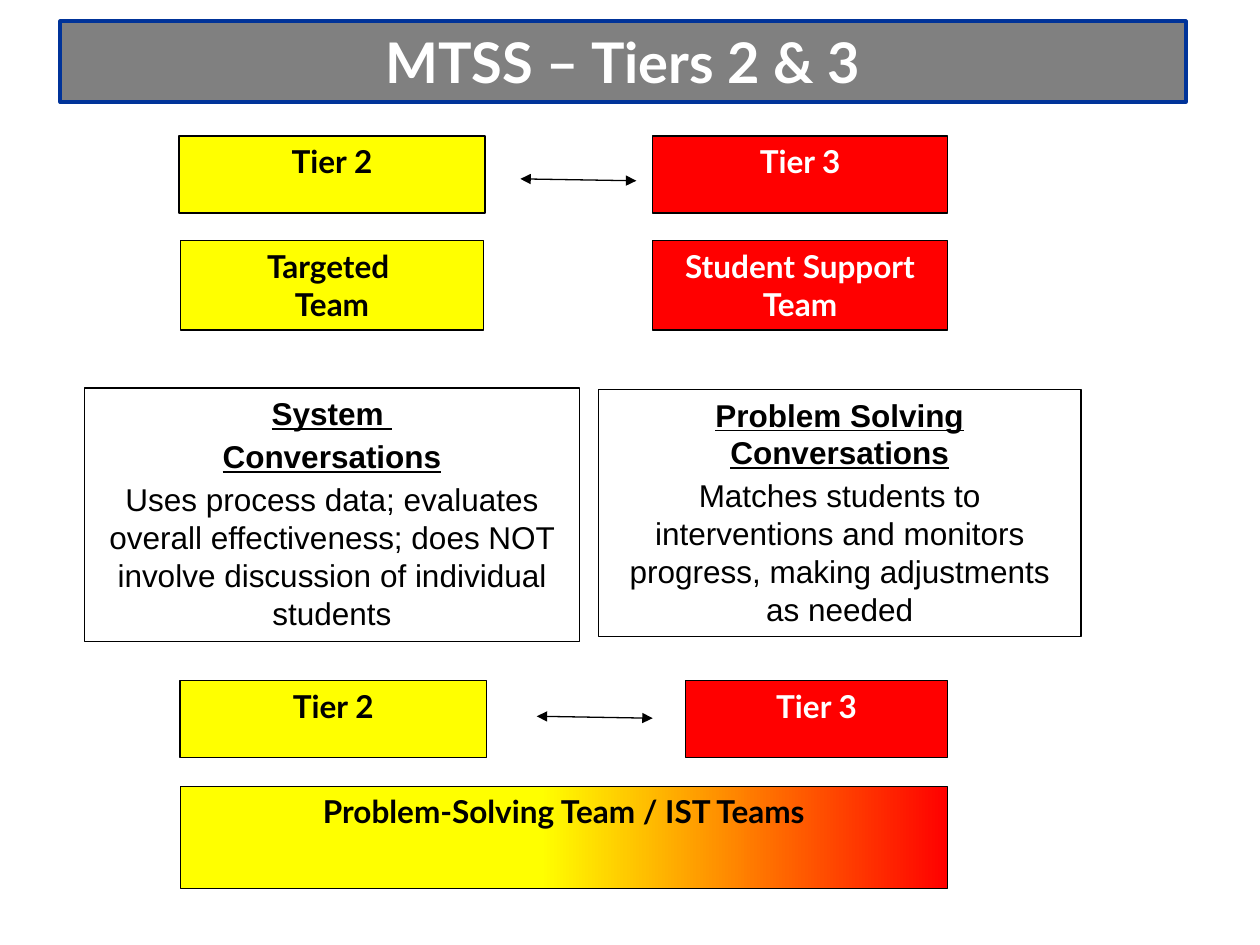
from lxml.etree import SubElement
from pptx import Presentation
from pptx.dml.color import RGBColor
from pptx.enum.shapes import MSO_CONNECTOR, MSO_SHAPE
from pptx.enum.text import MSO_ANCHOR, PP_ALIGN
from pptx.oxml.ns import qn
from pptx.util import Inches, Pt

YELLOW, RED, BLACK, WHITE = "FFFF00", "FF0000", "000000", "FFFFFF"
GRAY, NAVY = "808080", "003399"
COLS, ROWS = 100, 75


def color(code):
    return RGBColor.from_string(code)


class Board:
    """Style and current slide; lengths are columns and rows of the grid."""

    def __init__(self, deck):
        self.slide = deck.slides.add_slide(deck.slide_layouts[6])
        self.col = deck.slide_width / COLS
        self.row = deck.slide_height / ROWS

    def place(self, x, y):
        return round(x * self.col), round(y * self.row)

    def box(self, area, fill, line=BLACK, width=0.75):
        x, y, w, h = area
        box = self.slide.shapes.add_shape(
            MSO_SHAPE.RECTANGLE, *self.place(x, y), *self.place(w, h))
        box.shadow.inherit = False
        if isinstance(fill, str):
            box.fill.solid()
            box.fill.fore_color.rgb = color(fill)
        else:
            box.fill.gradient()
            box.fill.gradient_angle = 0
            for stop, (pos, code) in zip(box.fill.gradient_stops, fill):
                stop.position = pos
                stop.color.rgb = color(code)
        box.line.color.rgb = color(line)
        box.line.width = Pt(width)
        box.text_frame.word_wrap = True
        box.text_frame.vertical_anchor = MSO_ANCHOR.TOP
        return box

    def letter(self, box, lines, ink, font="Lato", size=18, gap=0):
        """Fill a box with centred bold lines, gap points apart."""
        frame = box.text_frame
        frame.text = "\n".join(lines)
        for i, para in enumerate(frame.paragraphs):
            para.alignment = PP_ALIGN.CENTER
            para.space_before = Pt(gap if i else 0)
            para.font.name = font
            para.font.size = Pt(size)
            para.font.bold = True
            para.font.color.rgb = color(ink)

    def label(self, area, fill, ink, *lines):
        self.letter(self.box(area, fill), lines, ink)

    def panel(self, area, heads, body):
        """White box with underlined headings over plain text."""
        box = self.box(area, WHITE)
        self.letter(box, [*heads, body], BLACK, "Arial", gap=3)
        *tops, last = box.text_frame.paragraphs
        for para in tops:
            para.font.underline = True
        last.font.bold = False

    def arrow(self, start, end):
        link = self.slide.shapes.add_connector(
            MSO_CONNECTOR.STRAIGHT, *self.place(*start), *self.place(*end))
        link.line.color.rgb = color(BLACK)
        link.line.width = Pt(0.75)
        line = link._element.spPr.find(qn("a:ln"))
        for tip in ("a:headEnd", "a:tailEnd"):
            SubElement(line, qn(tip), type="triangle")
        SubElement(link._element.spPr, qn("a:effectLst"))


def main():
    deck = Presentation()
    deck.slide_width, deck.slide_height = Inches(10), Inches(7.5)
    board = Board(deck)

    # Title bar
    title = board.box((4.8, 1.7, 89.3, 6.4), GRAY, NAVY, 2.25)
    board.letter(title, ["MTSS – Tiers 2 & 3"], WHITE, size=32)

    # Tier pairs: row, left of Tier 2, left and width of Tier 3
    for y, left, right, wide in ((10.8, 14.2, 51.8, 23.4),
                                 (54, 14.3, 54.4, 20.8)):
        board.label((left, y, 24.3, 6.1), YELLOW, BLACK, "Tier 2")
        board.label((right, y, wide, 6.1), RED, WHITE, "Tier 3")
    for x, y in ((41.3, 14.2), (42.6, 56.85)):
        board.arrow((x, y), (x + 9.2, y + 0.15))

    # Teams
    board.label((14.3, 19.1, 24.1, 7.1), YELLOW, BLACK, "Targeted ", "Team")
    board.label((51.8, 19.1, 23.4, 7.1), RED, WHITE, "Student Support Team")
    board.label((14.3, 62.4, 60.9, 8.1), ((0.47, YELLOW), (1, RED)), BLACK,
                "Problem-Solving Team / IST Teams")

    # Conversations
    board.panel((47.5, 30.9, 38.3, 19.6), ["Problem Solving Conversations"],
                "Matches students to interventions and monitors progress, "
                "making adjustments as needed")
    board.panel((6.7, 30.8, 39.3, 20.1), ["System ", "Conversations"],
                "Uses process data; evaluates overall effectiveness; does NOT "
                "involve discussion of individual students")

    deck.save("out.pptx")


if __name__ == "__main__":
    main()
